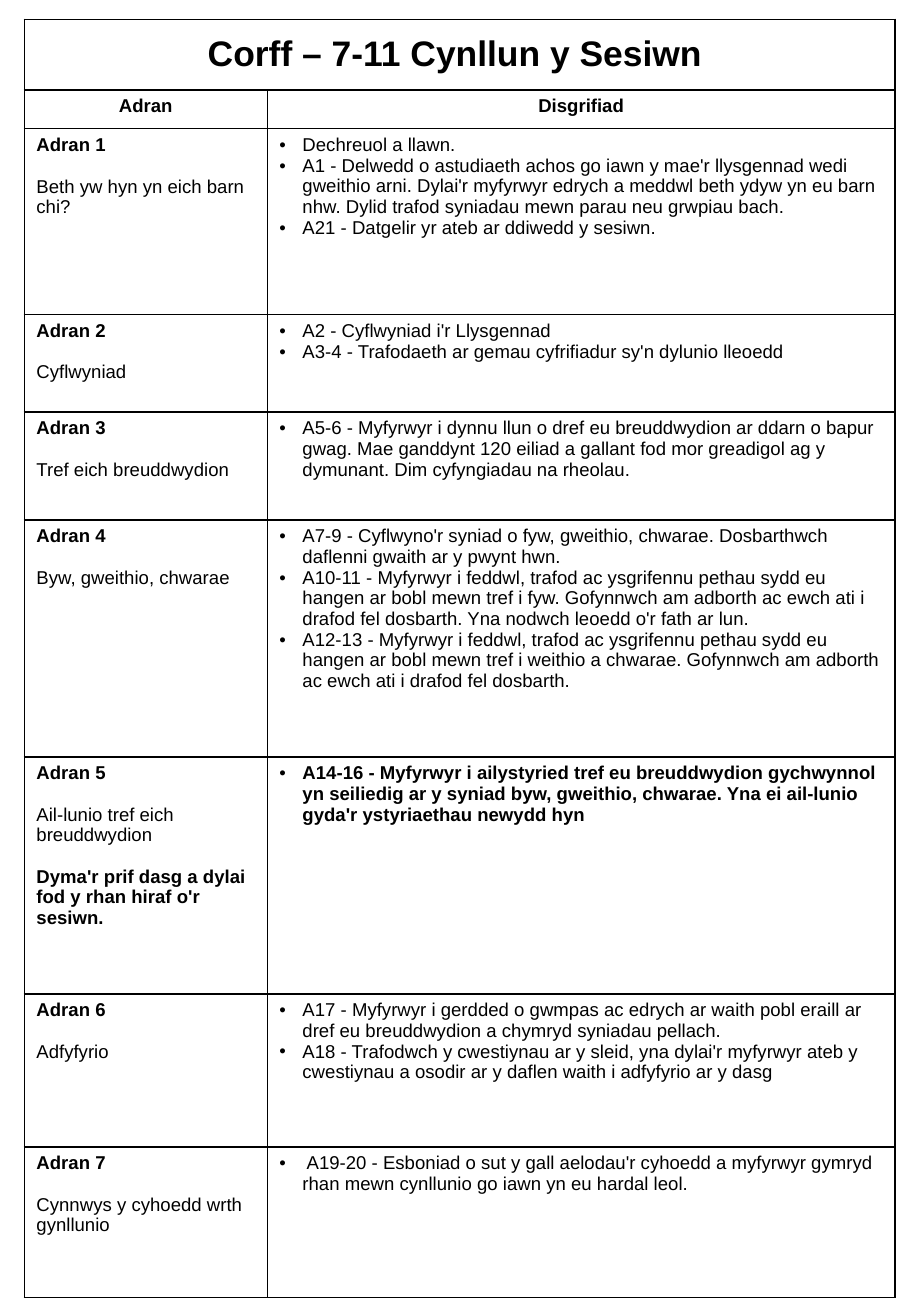
"""Build the one-page session plan table."""
from lxml import etree
from pptx import Presentation
from pptx.dml.color import RGBColor
from pptx.enum import text
from pptx.oxml import ns
from pptx.util import Inches, Pt

FONT = "Arial"
BLACK = "000000"
WHITE = "FFFFFF"
BODY_SIZE = 11
BULLET_INDENT = 0.19
COLUMN_WIDTHS = [2, 5.17]
ROW_HEIGHTS = [0.58, 0.32, 1.53, 0.8, 0.89, 1.95, 1.95, 1.26, 1.24]

TITLE = "Corff – 7-11 Cynllun y Sesiwn "
HEADINGS = ["Adran", "Disgrifiad"]
TOPICS = [
    "Beth yw hyn yn eich barn chi?",
    "Cyflwyniad",
    "Tref eich breuddwydion",
    "Byw, gweithio, chwarae",
    "Ail-lunio tref eich breuddwydion",
    "Adfyfyrio",
    "Cynnwys y cyhoedd wrth gynllunio",
]
MAIN_SECTION = 5
MAIN_NOTE = "Dyma'r prif dasg a dylai fod y rhan hiraf o'r sesiwn."
DESCRIPTIONS = [
    [
        "Dechreuol a llawn.",
        "A1 - Delwedd o astudiaeth achos go iawn y mae'r llysgennad wedi gweithio arni. "
        "Dylai'r myfyrwyr edrych a meddwl beth ydyw yn eu barn nhw. "
        "Dylid trafod syniadau mewn parau neu grwpiau bach.",
        "A21 - Datgelir yr ateb ar ddiwedd y sesiwn.",
    ],
    [
        "A2 - Cyflwyniad i'r Llysgennad",
        "A3-4 - Trafodaeth ar gemau cyfrifiadur sy'n dylunio lleoedd",
    ],
    [
        "A5-6 - Myfyrwyr i dynnu llun o dref eu breuddwydion ar ddarn o bapur gwag. "
        "Mae ganddynt 120 eiliad a gallant fod mor greadigol ag y dymunant. "
        "Dim cyfyngiadau na rheolau.",
    ],
    [
        "A7-9 - Cyflwyno'r syniad o fyw, gweithio, chwarae. "
        "Dosbarthwch daflenni gwaith ar y pwynt hwn.",
        "A10-11 - Myfyrwyr i feddwl, trafod ac ysgrifennu pethau sydd eu hangen ar bobl "
        "mewn tref i fyw. Gofynnwch am adborth ac ewch ati i drafod fel dosbarth. "
        "Yna nodwch leoedd o'r fath ar lun.",
        "A12-13 - Myfyrwyr i feddwl, trafod ac ysgrifennu pethau sydd eu hangen ar bobl "
        "mewn tref i weithio a chwarae. Gofynnwch am adborth ac ewch ati i drafod fel dosbarth.",
    ],
    [
        "A14-16 - Myfyrwyr i ailystyried tref eu breuddwydion gychwynnol yn seiliedig ar y "
        "syniad byw, gweithio, chwarae. Yna ei ail-lunio gyda'r ystyriaethau newydd hyn",
    ],
    [
        "A17 - Myfyrwyr i gerdded o gwmpas ac edrych ar waith pobl eraill ar dref eu "
        "breuddwydion a chymryd syniadau pellach.",
        "A18 - Trafodwch y cwestiynau ar y sleid, yna dylai'r myfyrwyr ateb y cwestiynau "
        "a osodir ar y daflen waith i adfyfyrio ar y dasg",
    ],
    [
        " A19-20 - Esboniad o sut y gall aelodau'r cyhoedd a myfyrwyr gymryd rhan mewn "
        "cynllunio go iawn yn eu hardal leol.",
    ],
]


def color(value):
    return RGBColor.from_string(value)


def add_child(parent, tag, **attributes):
    return etree.SubElement(parent, ns.qn(tag), **attributes)


def style_cell(cell):
    cell.margin_left = cell.margin_right = Inches(0.1)
    cell.margin_top = cell.margin_bottom = Inches(0.05)
    properties = cell._tc.get_or_add_tcPr()
    for side in ("a:lnL", "a:lnR", "a:lnT", "a:lnB"):
        line = add_child(properties, side, w=str(Pt(1)))
        add_child(add_child(line, "a:solidFill"), "a:srgbClr", val=BLACK)
    cell.fill.solid()
    cell.fill.fore_color.rgb = color(WHITE)


def format_paragraph(paragraph, size=BODY_SIZE, bold=False):
    paragraph.font.name = FONT
    paragraph.font.size = Pt(size)
    paragraph.font.bold = bold
    paragraph.font.color.rgb = color(BLACK)


def write_lines(cell, lines):
    cell.text = "\n".join(lines)
    return cell.text_frame.paragraphs


def write_heading(cell, words, size=BODY_SIZE):
    paragraph = write_lines(cell, [words])[0]
    paragraph.alignment = text.PP_ALIGN.CENTER
    format_paragraph(paragraph, size, True)


def write_section(cell, number, topic):
    lines = [f"Adran {number}", topic]
    if number == MAIN_SECTION:
        lines.append(MAIN_NOTE)
    for index, paragraph in enumerate(write_lines(cell, lines)):
        format_paragraph(paragraph, bold=index != 1)
        if index:
            paragraph.space_before = Pt(12.3)


def write_bullets(cell, lines, bold):
    for paragraph in write_lines(cell, lines):
        format_paragraph(paragraph, bold=bold)
        properties = paragraph._p.get_or_add_pPr()
        properties.set("marL", str(Inches(BULLET_INDENT)))
        properties.set("indent", str(Inches(-BULLET_INDENT)))
        bullet_color = etree.Element(ns.qn("a:buClr"))
        add_child(bullet_color, "a:srgbClr", val=BLACK)
        bullet_font = etree.Element(ns.qn("a:buFont"), typeface=FONT)
        bullet = etree.Element(ns.qn("a:buChar"), char="•")
        for position, element in enumerate((bullet_color, bullet_font, bullet)):
            properties.insert(position, element)


def add_plan_table(page):
    frame = page.shapes.add_table(
        len(ROW_HEIGHTS), len(COLUMN_WIDTHS), Inches(0.2), Inches(0.16),
        Inches(sum(COLUMN_WIDTHS)), Inches(sum(ROW_HEIGHTS)))
    table = frame.table
    table.first_row = table.horz_banding = False
    for column, width in zip(table.columns, COLUMN_WIDTHS):
        column.width = Inches(width)
    for row, height in zip(table.rows, ROW_HEIGHTS):
        row.height = Inches(height)
    for cell in table.iter_cells():
        style_cell(cell)
    return table


def main():
    deck = Presentation()
    deck.slide_width, deck.slide_height = Inches(7.5), Inches(10.83)
    page = deck.slides.add_slide(deck.slide_layouts[6])
    table = add_plan_table(page)

    title_cell = table.cell(0, 0)
    title_cell.merge(table.cell(0, 1))
    title_cell.vertical_anchor = text.MSO_ANCHOR.MIDDLE
    write_heading(title_cell, TITLE, 21)
    for column, heading in enumerate(HEADINGS):
        write_heading(table.cell(1, column), heading)
    for number, (topic, bullets) in enumerate(zip(TOPICS, DESCRIPTIONS), 1):
        write_section(table.cell(number + 1, 0), number, topic)
        write_bullets(table.cell(number + 1, 1), bullets, number == MAIN_SECTION)

    deck.save("out.pptx")


if __name__ == "__main__":
    main()
